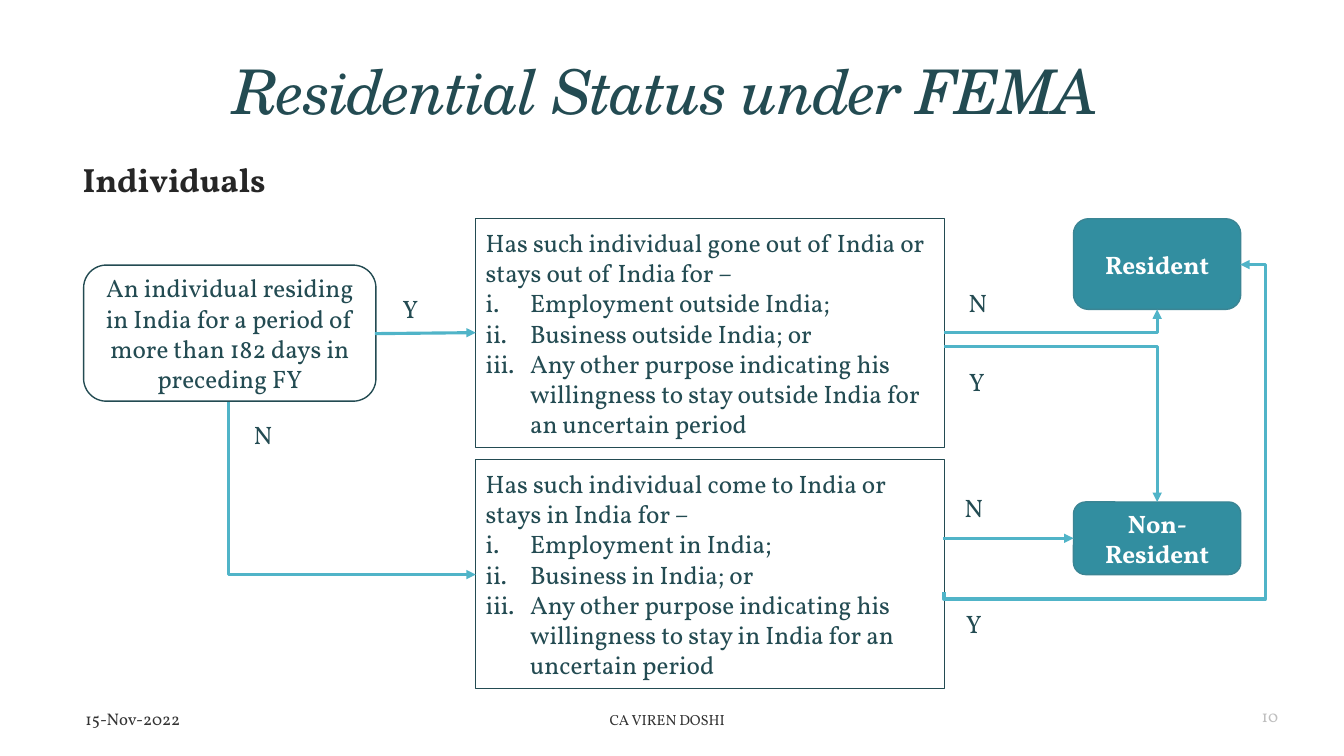
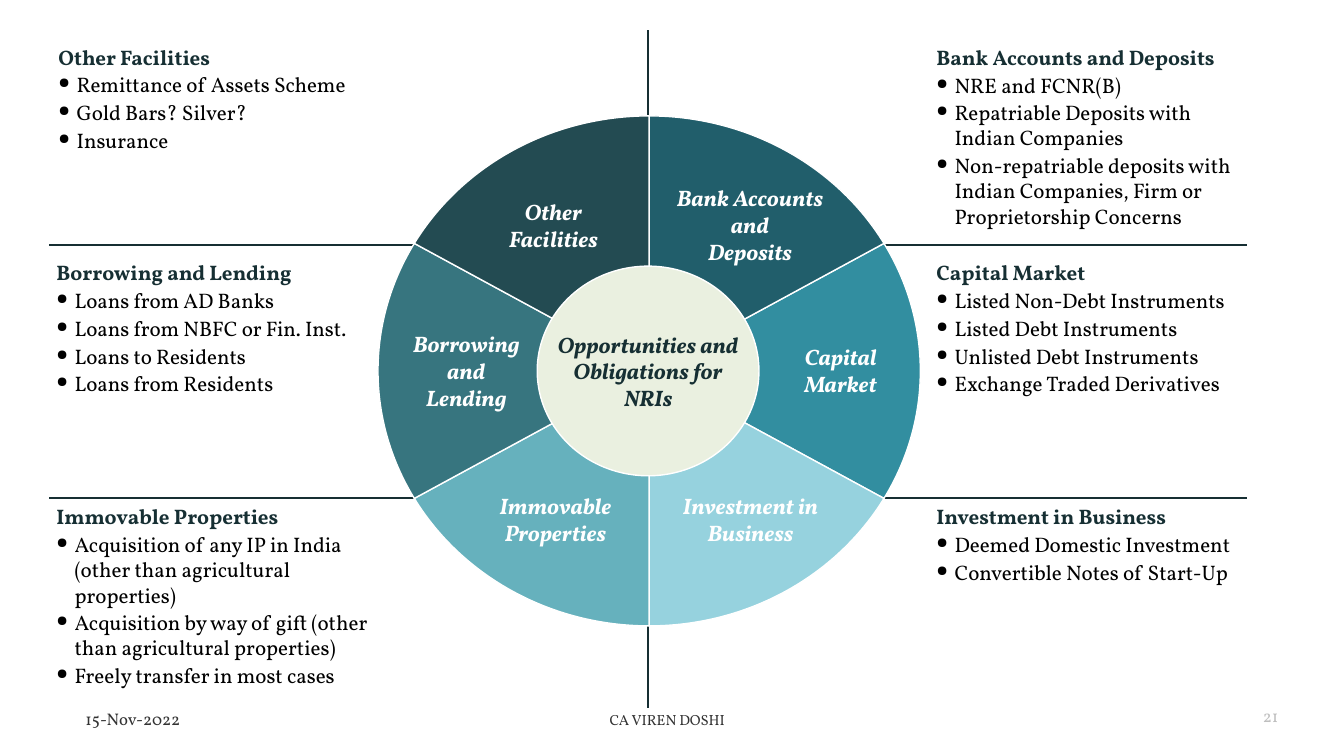
from dataclasses import dataclass, replace
from math import cos, radians, sin, tan

from lxml.etree import SubElement
from pptx import Presentation
from pptx.dml.color import RGBColor
from pptx.enum.shapes import MSO_CONNECTOR, MSO_SHAPE
from pptx.enum.text import MSO_ANCHOR, PP_ALIGN
from pptx.oxml.ns import qn
from pptx.util import Inches, Pt

COLORS = {
    "deep": "234B52", "ink": "162F33", "petrol": "215E6B", "teal": "328EA0",
    "edge": "3B8594", "slate": "37757F", "aqua": "66B1BD", "sky": "96D2DE",
    "arrow": "50B4C8", "cream": "EAF0E0", "white": "FFFFFF",
    "black": "000000", "heading": "262626", "footer": "333333", "number": "BFBFBF",
}
Point = tuple[float, float]
Frame = tuple[float, float, float, float]
DEFAULT_INSETS = (0.1, 0.05, 0.1, 0.05)
NO_INSETS = (0, 0, 0, 0)


@dataclass(frozen=True)
class TextStyle:
    size: float
    color: str
    bold: bool = False
    italic: bool = False
    font: str = "Vollkorn"
    align: PP_ALIGN = PP_ALIGN.CENTER


@dataclass(frozen=True)
class Node:
    frame: Frame
    text: str
    shape: MSO_SHAPE
    style: TextStyle
    fill: str | None = None
    line: str = "deep"
    insets: Frame = DEFAULT_INSETS
    items: tuple[str, ...] = ()


@dataclass(frozen=True)
class Elbow:
    frame: Frame
    preset: str = "bentConnector2"
    rotation: int = 0
    flips: tuple[str, ...] = ()
    adjustments: tuple[int, ...] = ()


@dataclass(frozen=True)
class Sector:
    start_angle: int
    fill: str
    label: str
    label_frame: Frame
    detail_frame: Frame
    heading: str
    items: tuple[str, ...]
    arc_count: int = 1


TITLE = TextStyle(44, "deep", italic=True, font="TeX Gyre Schola")
SUBTITLE = TextStyle(24, "heading", bold=True, align=PP_ALIGN.LEFT)
FLOW = TextStyle(18, "deep")
QUESTION = replace(FLOW, align=PP_ALIGN.LEFT)
OUTCOME = TextStyle(18, "white", bold=True)
SECTOR_LABEL = TextStyle(16, "white", bold=True, italic=True)
HUB_LABEL = replace(SECTOR_LABEL, color="ink")
DETAIL_HEADING = TextStyle(15, "ink", bold=True, align=PP_ALIGN.LEFT)
DETAIL_ITEM = replace(DETAIL_HEADING, color="black", bold=False)
DATE = TextStyle(12, "footer", align=PP_ALIGN.LEFT)
AUTHOR = TextStyle(10.5, "footer")
PAGE_NUMBER = TextStyle(12, "number", align=PP_ALIGN.RIGHT)

OUTCOME_INSETS = (0.07, 0.04, 0.07, 0.04)
NODES = [
    Node((0.83, 2.63, 2.9, 1.35),
         "An individual residing in India for a period of more than 182 days in preceding FY",
         MSO_SHAPE.ROUNDED_RECTANGLE, FLOW),
    Node((4.72, 2.17, 4.65, 2.27),
         "Has such individual gone out of India or stays out of India for –",
         MSO_SHAPE.RECTANGLE, QUESTION,
         items=("Employment outside India;", "Business outside India; or",
                "Any other purpose indicating his willingness to stay outside India "
                "for an uncertain period")),
    Node((4.72, 4.56, 4.65, 2.27),
         "Has such individual come to India or stays in India for –",
         MSO_SHAPE.RECTANGLE, QUESTION,
         items=("Employment in India;", "Business in India; or",
                "Any other purpose indicating his willingness to stay in India "
                "for an uncertain period")),
    Node((10.65, 2.17, 1.66, 0.9), "Resident", MSO_SHAPE.ROUNDED_RECTANGLE,
         OUTCOME, "teal", "edge", OUTCOME_INSETS),
    Node((10.65, 4.98, 1.66, 0.72), "Non-Resident", MSO_SHAPE.ROUNDED_RECTANGLE,
         OUTCOME, "teal", "edge", OUTCOME_INSETS),
]
STRAIGHT_ARROWS: list[tuple[Point, Point]] = [
    ((3.72, 3.31), (4.72, 3.3)),
    ((9.36, 5.34), (10.65, 5.34)),
]
ELBOWS = [
    Elbow((2.64, 3.62, 1.71, 2.45), rotation=270, flips=("flipH",)),
    Elbow((9.37, 3.07, 2.11, 0.23), flips=("flipV",)),
    Elbow((9.37, 3.44, 2.11, 1.54)),
    Elbow((9.21, 2.78, 3.25, 2.94), "bentConnector4", 90, ("flipH", "flipV"),
          (-2100, 108500)),
]
ANSWERS = [
    ("Y", 3.73, 2.73), ("Y", 9.35, 3.46), ("Y", 9.32, 5.86),
    ("N", 2.27, 3.98), ("N", 9.36, 2.67), ("N", 9.32, 4.71),
]

CENTER: Point = (6.44, 3.68)
RADII: Point = (2.69, 2.53)
SWEEP = 60
SECTORS = [
    Sector(-30, "teal", "Capital\nMarket", (7.93, 3.4, 0.82, 0.54),
           (9.2, 2.53, 3.25, 2.33), "Capital Market",
           ("Listed Non-Debt Instruments", "Listed Debt Instruments",
            "Unlisted Debt Instruments", "Exchange Traded Derivatives"), 2),
    Sector(-90, "petrol", "Bank Accounts\nand\nDeposits", (6.68, 1.82, 1.52, 0.81),
           (9.2, 0.39, 3.27, 2.45), "Bank Accounts and Deposits",
           ("NRE and FCNR(B)", "Repatriable Deposits with Indian Companies",
            "Non-repatriable deposits with Indian Companies, Firm or Proprietorship Concerns")),
    Sector(30, "sky", "Investment in\nBusiness", (6.46, 4.88, 1.97, 0.54),
           (9.2, 4.95, 3.45, 2.32), "Investment in Business",
           ("Deemed Domestic Investment", "Convertible Notes of Start-Up")),
    Sector(90, "aqua", "Immovable Properties", (4.72, 4.88, 1.58, 0.54),
           (0.47, 4.95, 3.37, 2.32), "Immovable Properties",
           ("Acquisition of any IP in India (other than agricultural properties)",
            "Acquisition by way of gift (other than agricultural properties)",
            "Freely transfer in most cases")),
    Sector(150, "slate", "Borrowing\nand\nLending", (4.08, 3.27, 1.09, 0.81),
           (0.47, 2.53, 3.37, 2.33), "Borrowing and Lending",
           ("Loans from AD Banks", "Loans from NBFC or Fin. Inst.",
            "Loans to Residents", "Loans from Residents"), 2),
    Sector(210, "deep", "Other\nFacilities", (5.02, 1.96, 0.94, 0.54),
           (0.49, 0.39, 3.37, 2.03), "Other Facilities",
           ("Remittance of Assets Scheme", "Gold Bars? Silver?", "Insurance")),
]


def rgb(name: str) -> RGBColor:
    return RGBColor.from_string(COLORS[name])


def place(shape, frame: Frame) -> None:
    shape.left, shape.top, shape.width, shape.height = map(Inches, frame)


def style_paragraph(para, style: TextStyle) -> None:
    para.alignment = style.align
    for span in para.runs:
        span.font.name = style.font
        span.font.size = Pt(style.size)
        span.font.bold = style.bold
        span.font.italic = style.italic
        span.font.color.rgb = rgb(style.color)


def set_bullet(para, tag: str, indent: float = 0, size: int = 100, **attributes: str) -> None:
    properties = para._p.get_or_add_pPr()
    properties.set("marL", str(Inches(indent)))
    properties.set("indent", str(-Inches(indent)))
    SubElement(properties, qn("a:buSzPct"), val=str(size * 1000))
    SubElement(properties, qn(tag), attributes)


def write(shape, text: str, style: TextStyle, anchor: MSO_ANCHOR = MSO_ANCHOR.MIDDLE,
          insets: Frame = DEFAULT_INSETS, wrap: bool = True) -> None:
    text_frame = shape.text_frame
    text_frame.word_wrap = wrap
    text_frame.vertical_anchor = anchor
    (text_frame.margin_left, text_frame.margin_top,
     text_frame.margin_right, text_frame.margin_bottom) = map(Inches, insets)
    text_frame.text = text
    for para in text_frame.paragraphs:
        style_paragraph(para, style)


def add_item(shape, text: str, style: TextStyle):
    para = shape.text_frame.add_paragraph()
    para.text = text
    style_paragraph(para, style)
    return para


def add_text(page, frame: Frame, text: str, style: TextStyle, **options):
    box = page.shapes.add_textbox(*map(Inches, frame))
    write(box, text, style, **options)
    return box


def paint(shape, fill: str | None, line: str) -> None:
    shape.shadow.inherit = False
    if fill:
        shape.fill.solid()
        shape.fill.fore_color.rgb = rgb(fill)
    else:
        shape.fill.background()
    shape.line.color.rgb = rgb(line)
    shape.line.width = Pt(1)


def add_line(page, start: Point, end: Point, color: str = "ink", width: float = 1,
             kind: MSO_CONNECTOR = MSO_CONNECTOR.STRAIGHT):
    connector = page.shapes.add_connector(kind, *map(Inches, (*start, *end)))
    connector.line.color.rgb = rgb(color)
    connector.line.width = Pt(width)
    SubElement(connector.element.spPr, qn("a:effectLst"))
    return connector


def add_arrow(page, start: Point, end: Point,
              kind: MSO_CONNECTOR = MSO_CONNECTOR.STRAIGHT):
    connector = add_line(page, start, end, "arrow", 2.25, kind)
    outline = connector.element.spPr.find(qn("a:ln"))
    SubElement(outline, qn("a:tailEnd"), type="triangle")
    return connector


def add_elbow(page, elbow: Elbow) -> None:
    left, top, width, height = elbow.frame
    connector = add_arrow(page, (left, top), (left + width, top + height),
                          MSO_CONNECTOR.ELBOW)
    properties = connector.element.spPr
    transform = properties.find(qn("a:xfrm"))
    transform.set("rot", str(elbow.rotation * 60000))
    for flip in elbow.flips:
        transform.set(flip, "1")
    geometry = properties.find(qn("a:prstGeom"))
    geometry.set("prst", elbow.preset)
    guides = geometry.find(qn("a:avLst"))
    for index, value in enumerate(elbow.adjustments, 1):
        SubElement(guides, qn("a:gd"), name=f"adj{index}", fmla=f"val {value}")


def add_node(page, node: Node) -> None:
    box = page.shapes.add_shape(node.shape, *map(Inches, node.frame))
    paint(box, node.fill, node.line)
    write(box, node.text, node.style, insets=node.insets)
    for item in node.items:
        para = add_item(box, item, node.style)
        set_bullet(para, "a:buAutoNum", 0.44, type="romanLcPeriod")


def rim_point(angle: float, tangent: float = 0) -> Point:
    across, down = cos(radians(angle)), sin(radians(angle))
    return (Inches(CENTER[0] + RADII[0] * (across - tangent * down)),
            Inches(CENTER[1] + RADII[1] * (down + tangent * across)))


def add_sector(page, sector: Sector) -> None:
    step = SWEEP / sector.arc_count
    reach = 4 / 3 * tan(radians(step / 4))
    angles = [sector.start_angle + step * index for index in range(sector.arc_count + 1)]
    first, *others = map(rim_point, angles)
    builder = page.shapes.build_freeform(*first)
    builder.add_line_segments([*others, tuple(map(Inches, CENTER))], close=True)
    wedge = builder.convert_to_shape()
    paint(wedge, sector.fill, "white")
    edges = list(wedge.element.iter(qn("a:lnTo")))
    for edge, start, end in zip(edges, angles, angles[1:]):
        curve = edge.makeelement(qn("a:cubicBezTo"))
        for x, y in (rim_point(start, reach), rim_point(end, -reach), rim_point(end)):
            SubElement(curve, qn("a:pt"), x=str(x - wedge.left), y=str(y - wedge.top))
        edge.getparent().replace(edge, curve)


def add_details(page, sector: Sector) -> None:
    box = add_text(page, sector.detail_frame, sector.heading, DETAIL_HEADING,
                   anchor=MSO_ANCHOR.TOP, insets=(0.09, 0.05, 0.05, 0.05))
    for item in sector.items:
        para = add_item(box, item, DETAIL_ITEM)
        para.level = 1
        set_bullet(para, "a:buChar", 0.18, 70, char="●")
    for para in box.text_frame.paragraphs:
        para.space_after = Pt(1.8)


def add_footer(page, number: int) -> None:
    add_text(page, (0.75, 7.01, 4.5, 0.25), "15-Nov-2022", DATE)
    add_text(page, (3.87, 7.01, 5.5, 0.25), "CA VIREN DOSHI", AUTHOR)
    add_text(page, (9.7, 7.01, 3.08, 0.24), str(number), PAGE_NUMBER,
             anchor=MSO_ANCHOR.BOTTOM)


def build_status_page(deck) -> None:
    page = deck.slides.add_slide(deck.slide_layouts[1])
    title, body = page.placeholders
    place(title, (0.72, 0.38, 11.78, 1.13))
    write(title, "Residential Status under FEMA", TITLE)
    heading = title.text_frame.paragraphs[0]
    heading.line_spacing = 0.85
    heading.runs[0]._r.get_or_add_rPr().set("spc", "-120")
    place(body, (0.72, 1.53, 11.78, 5.2))
    write(body, "Individuals", SUBTITLE, anchor=MSO_ANCHOR.TOP)
    subtitle = body.text_frame.paragraphs[0]
    subtitle.space_before, subtitle.space_after = Pt(5), Pt(3)
    set_bullet(subtitle, "a:buNone")
    for node in NODES:
        add_node(page, node)
    for start, end in STRAIGHT_ARROWS:
        add_arrow(page, start, end)
    for elbow in ELBOWS:
        add_elbow(page, elbow)
    for answer, left, top in ANSWERS:
        add_text(page, (left, top, 0.68, 0.65), answer, FLOW)
    add_footer(page, 10)


def build_opportunities_page(deck) -> None:
    page = deck.slides.add_slide(deck.slide_layouts[6])
    add_line(page, (6.43, 0.3), (6.43, 7.02))
    for height in (2.43, 4.94):
        add_line(page, (12.37, height), (0.49, height))
    for sector in SECTORS:
        add_sector(page, sector)
    hub = page.shapes.add_shape(MSO_SHAPE.OVAL, *map(Inches, (5.33, 2.64, 2.2, 2.08)))
    paint(hub, "cream", "white")
    write(hub, "Opportunities and\nObligations for\nNRIs", HUB_LABEL,
          insets=NO_INSETS, wrap=False)
    for sector in SECTORS:
        add_text(page, sector.label_frame, sector.label, SECTOR_LABEL,
                 insets=NO_INSETS, wrap="\n" not in sector.label)
        add_details(page, sector)
    add_footer(page, 21)


def main() -> None:
    deck = Presentation()
    deck.slide_width, deck.slide_height = Inches(40 / 3), Inches(7.5)
    build_status_page(deck)
    build_opportunities_page(deck)
    deck.save("out.pptx")


if __name__ == "__main__":
    main()
